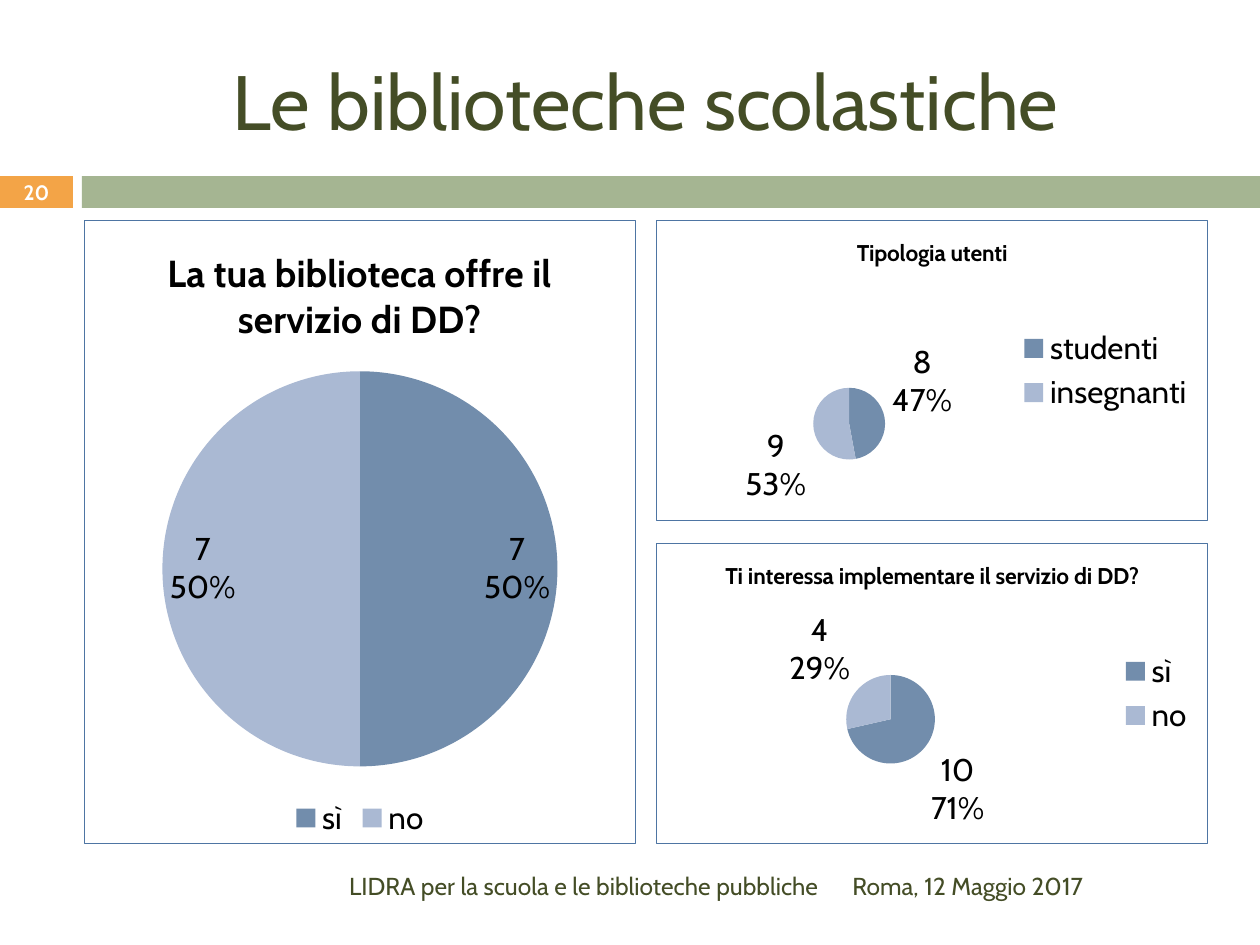
from dataclasses import dataclass

from lxml.etree import SubElement
from pptx import Presentation
from pptx.chart.data import CategoryChartData
from pptx.dml.color import RGBColor
from pptx.enum.chart import XL_CHART_TYPE, XL_LABEL_POSITION, XL_LEGEND_POSITION
from pptx.enum.shapes import MSO_SHAPE
from pptx.enum.text import MSO_ANCHOR, PP_ALIGN
from pptx.oxml import parse_xml
from pptx.oxml.ns import nsdecls, qn
from pptx.util import Emu, Pt

PX = 914400 / 126
FONT = "Cabin"
BLACK = RGBColor(0x00, 0x00, 0x00)
WHITE = RGBColor(0xFF, 0xFF, 0xFF)
OLIVE = RGBColor(0x44, 0x4D, 0x26)
GREEN = RGBColor(0xA5, 0xB5, 0x92)
ORANGE = RGBColor(0xF3, 0xA4, 0x47)
BORDER = RGBColor(0x4E, 0x75, 0xA3)
SLICES = (RGBColor(0x72, 0x8D, 0xAC), RGBColor(0xAA, 0xB9, 0xD3))


@dataclass
class Box:
    x: int
    y: int
    w: int
    h: int

    def emu(self) -> list[Emu]:
        return [Emu(round(v * PX)) for v in (self.x, self.y, self.w, self.h)]


@dataclass
class Label:
    text: str
    box: Box
    size: float
    align: PP_ALIGN
    color: RGBColor = OLIVE
    bold: bool = False


@dataclass
class Pie:
    title: str
    title_size: float
    box: Box
    plot: Box
    categories: tuple[str, str]
    values: tuple[int, int]
    legend: XL_LEGEND_POSITION
    label_pos: XL_LABEL_POSITION


def add_bar(s, box: Box, color: RGBColor) -> None:
    sp = s.shapes.add_shape(MSO_SHAPE.RECTANGLE, *box.emu())
    sp.shadow.inherit = False
    sp.fill.solid()
    sp.fill.fore_color.rgb = color
    sp.line.fill.background()


def add_run(p, text: str, size: float, color: RGBColor, bold: bool) -> None:
    r = p.add_run()
    r.text = text
    r.font.name = FONT
    r.font.size = Pt(size)
    r.font.bold = bold
    r.font.color.rgb = color


def add_label(s, label: Label) -> None:
    tf = s.shapes.add_textbox(*label.box.emu()).text_frame
    tf.word_wrap = True
    tf.vertical_anchor = MSO_ANCHOR.MIDDLE
    p = tf.paragraphs[0]
    p.alignment = label.align
    add_run(p, label.text, label.size, label.color, label.bold)


def place_plot(chart, pie: Pie) -> None:
    """Fix the plot area at its place, as fractions of the chart."""
    area = chart.plots._plotArea
    for old in area.findall(qn("c:layout")):
        area.remove(old)
    box, plot = pie.box, pie.plot
    layout = parse_xml(f"<c:layout {nsdecls('c')}><c:manualLayout/></c:layout>")
    parts = {
        "layoutTarget": "inner", "xMode": "edge", "yMode": "edge",
        "x": (plot.x - box.x) / box.w, "y": (plot.y - box.y) / box.h,
        "w": plot.w / box.w, "h": plot.h / box.h,
    }
    for tag, val in parts.items():
        SubElement(layout[0], qn(f"c:{tag}")).set("val", str(val))
    area.insert(0, layout)


def add_border(chart) -> None:
    chart._chartSpace.find(qn("c:chart")).addnext(parse_xml(
        f"<c:spPr {nsdecls('c', 'a')}><a:noFill/><a:ln w=\"9525\"><a:solidFill>"
        f"<a:srgbClr val=\"{BORDER}\"/></a:solidFill></a:ln></c:spPr>"))


def add_pie(s, pie: Pie) -> None:
    data = CategoryChartData()
    data.categories = pie.categories
    data.add_series(pie.title, pie.values)
    chart = s.shapes.add_chart(XL_CHART_TYPE.PIE, *pie.box.emu(), data).chart
    chart.font.name = FONT
    chart.font.size = Pt(18)
    chart.font.color.rgb = BLACK

    # Title and legend
    chart.has_title = True
    p = chart.chart_title.text_frame.paragraphs[0]
    add_run(p, pie.title, pie.title_size, BLACK, True)
    chart.chart_title.include_in_layout = False
    chart.has_legend = True
    chart.legend.position = pie.legend
    chart.legend.include_in_layout = False

    # Slices and their labels
    plot = chart.plots[0]
    plot.vary_by_categories = True
    for i, color in enumerate(SLICES):
        fill = plot.series[0].points[i].format.fill
        fill.solid()
        fill.fore_color.rgb = color
    labels = plot.series[0].data_labels
    labels.show_value = True
    labels.show_percentage = True
    labels.position = pie.label_pos
    separator = parse_xml(f"<c:separator {nsdecls('c')}>\n</c:separator>")
    labels._element.find(qn("c:showBubbleSize")).addnext(separator)

    place_plot(chart, pie)
    add_border(chart)


BARS = [
    (Box(0, 176, 73, 32), ORANGE),
    (Box(82, 176, 1178, 32), GREEN),
]
LABELS = [
    Label("Le biblioteche scolastiche", Box(84, 32, 1124, 136), 44, PP_ALIGN.CENTER),
    Label("Roma, 12 Maggio 2017", Box(840, 861, 368, 50), 14, PP_ALIGN.LEFT),
    Label("LIDRA per la scuola e le biblioteche pubbliche",
          Box(84, 861, 747, 50), 14, PP_ALIGN.RIGHT),
    Label("20", Box(0, 175, 73, 34), 11.9, PP_ALIGN.CENTER, WHITE, True),
]
PIES = [
    Pie("La tua biblioteca offre il servizio di DD?", 21.6,
        Box(84, 220, 552, 624), Box(162, 371, 396, 396), ("sì", "no"), (7, 7),
        XL_LEGEND_POSITION.BOTTOM, XL_LABEL_POSITION.INSIDE_END),
    Pie("Tipologia utenti", 13,
        Box(656, 220, 552, 301), Box(813, 388, 72, 72),
        ("studenti", "insegnanti"), (8, 9),
        XL_LEGEND_POSITION.RIGHT, XL_LABEL_POSITION.OUTSIDE_END),
    Pie("Ti interessa implementare il servizio di DD?", 13,
        Box(656, 543, 552, 301), Box(846, 675, 89, 89), ("sì", "no"), (10, 4),
        XL_LEGEND_POSITION.RIGHT, XL_LABEL_POSITION.OUTSIDE_END),
]


def main() -> None:
    prs = Presentation()
    prs.slide_width, prs.slide_height = Box(0, 0, 1260, 945).emu()[2:]
    s = prs.slides.add_slide(prs.slide_layouts[6])
    for box, color in BARS:
        add_bar(s, box, color)
    for pie in PIES:
        add_pie(s, pie)
    for label in LABELS:
        add_label(s, label)
    prs.save("out.pptx")


if __name__ == "__main__":
    main()
